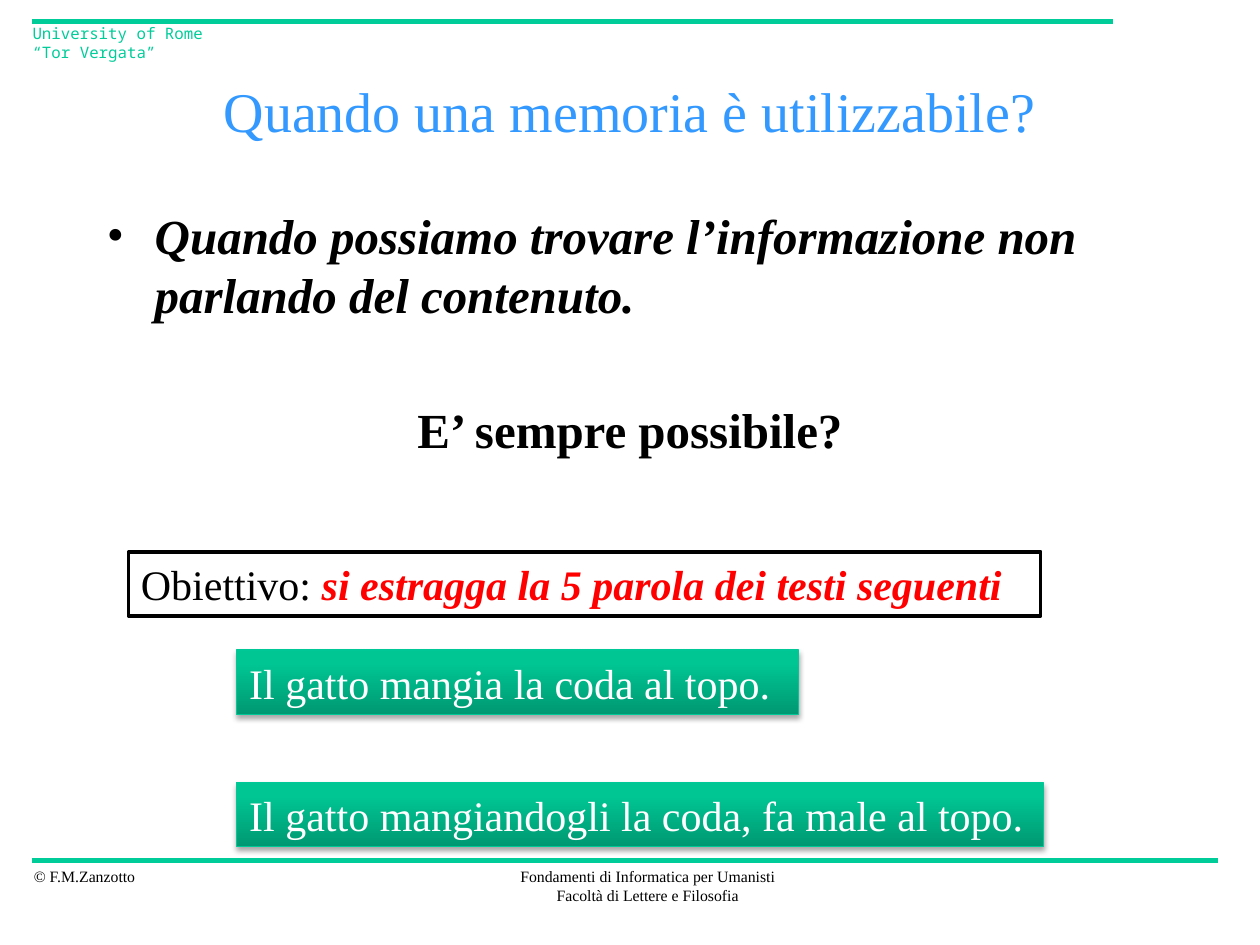
from lxml import etree
from pptx import Presentation
from pptx.dml.color import RGBColor
from pptx.enum.shapes import MSO_CONNECTOR, MSO_SHAPE
from pptx.enum.text import MSO_ANCHOR, PP_ALIGN
from pptx.oxml.ns import qn
from pptx.util import Inches, Pt

LINE = MSO_CONNECTOR.STRAIGHT
RECT = MSO_SHAPE.RECTANGLE
LEFT, CENTER = PP_ALIGN.LEFT, PP_ALIGN.CENTER
TOP, MIDDLE = MSO_ANCHOR.TOP, MSO_ANCHOR.MIDDLE

SERIF, MONO = "Times New Roman", "Noto Sans Mono"
BLACK, WHITE, RED = "000000", "FFFFFF", "FF0000"
GREEN, BLUE = "00CC99", "3399FF"
EDGE = "00C896"
GRADIENT = [(0, "009872"), (80, "00C694"), (100, "00C795")]


def rgb(value):
    return RGBColor.from_string(value)


def child(parent, tag, **attrs):
    """Append a DrawingML element with the given attributes."""
    return etree.SubElement(parent, qn(tag), {k: str(v) for k, v in attrs.items()})


class Deck:
    def __init__(self):
        self.prs = Presentation()
        self.prs.slide_width, self.prs.slide_height = Inches(10), Inches(7.5)
        self.s = self.prs.slides.add_slide(self.prs.slide_layouts[6])

    def style(self, p, size, color, font=SERIF, bold=False, italic=False):
        for r in p.runs:
            f = r.font
            f.name, f.size, f.bold, f.italic = font, Pt(size), bold, italic
            f.color.rgb = rgb(color)

    def rule(self, x1, x2, y):
        line = self.s.shapes.add_connector(LINE, Inches(x1), Inches(y), Inches(x2), Inches(y))
        line.line.color.rgb = rgb(GREEN)
        line.line.width = Pt(3)
        child(line._element.spPr, "a:effectLst")

    def text(self, box, lines, size, color, font=SERIF, align=LEFT, anchor=TOP, wrap=True):
        tf = self.s.shapes.add_textbox(*map(Inches, box)).text_frame
        tf.word_wrap, tf.vertical_anchor = wrap, anchor
        tf.text = "\n".join(lines)
        for p in tf.paragraphs:
            p.alignment = align
            self.style(p, size, color, font)
        return tf

    def bullet(self, p):
        pPr = p._p.get_or_add_pPr()
        pPr.set("marL", str(Inches(0.38)))
        pPr.set("indent", str(-Inches(0.38)))
        child(pPr, "a:buFont", typeface=SERIF)
        child(pPr, "a:buChar", char="•")

    def box(self, box, text, color, line, width):
        sp = self.s.shapes.add_shape(RECT, *map(Inches, box))
        sp.shadow.inherit = False
        sp.fill.solid()
        sp.fill.fore_color.rgb = rgb(WHITE)
        sp.line.color.rgb = rgb(line)
        sp.line.width = Pt(width)
        tf = sp.text_frame
        tf.word_wrap = True
        tf.text = text
        p = tf.paragraphs[0]
        p.alignment = LEFT
        self.style(p, 24, color)
        return sp

    def example(self, box, text):
        """Box with a vertical green gradient and a soft shadow below."""
        sp = self.box(box, text, WHITE, EDGE, 0.75)
        sp.fill.gradient()
        sp.fill.gradient_angle = 90
        spPr = sp._element.spPr
        stops = spPr.find(".//" + qn("a:gsLst"))
        for old in list(stops):
            stops.remove(old)
        for pos, color in GRADIENT:
            child(child(stops, "a:gs", pos=pos * 1000), "a:srgbClr", val=color)
        shadow = child(spPr.find(qn("a:effectLst")), "a:outerShdw", blurRad=Pt(3.1),
                       dist=Pt(1.8), dir=90 * 60000, rotWithShape=0)
        child(child(shadow, "a:srgbClr", val=BLACK), "a:alpha", val=35000)


def main():
    deck = Deck()
    deck.rule(0.25, 9.67, 6.83)
    deck.rule(0.25, 8.83, 0.17)
    deck.text((0.17, 6.83, 1.02, 0.25), ["© F.M.Zanzotto"], 9, BLACK, wrap=False)
    deck.text((4.02, 6.83, 2.24, 0.4),
              ["Fondamenti di Informatica per Umanisti", "Facoltà di Lettere e Filosofia"],
              9, BLACK, align=CENTER, wrap=False)
    deck.text((0.16, 0.14, 1.71, 0.4), ["University of Rome", "“Tor Vergata”"], 9, GREEN, MONO)

    deck.text((0.75, 0.5, 8.5, 0.75), ["Quando una memoria è utilizzabile?"],
              32, BLUE, align=CENTER, anchor=MIDDLE)

    tf = deck.text((0.75, 1.5, 8.5, 5.17),
                   ["Quando possiamo trovare l’informazione non parlando del contenuto.",
                    "E’ sempre possibile?"], 28, BLACK)
    tf.margin_top = Inches(0.13)
    answer, question = tf.paragraphs
    deck.bullet(answer)
    deck.style(answer, 28, BLACK, bold=True, italic=True)
    question.alignment = CENTER
    question.space_before = Pt(44)
    deck.style(question, 28, BLACK, bold=True)

    deck.example((1.88, 5.16, 4.46, 0.51), "Il gatto mangia la coda al topo.")
    deck.example((1.88, 6.21, 6.4, 0.51), "Il gatto mangiandogli la coda, fa male al topo.")

    goal = deck.box((1.02, 4.38, 7.24, 0.51), "Obiettivo: ", BLACK, BLACK, 2)
    r = goal.text_frame.paragraphs[0].add_run()
    r.text = "si estragga la 5 parola dei testi seguenti"
    f = r.font
    f.name, f.size, f.bold, f.italic = SERIF, Pt(24), True, True
    f.color.rgb = rgb(RED)

    deck.prs.save("out.pptx")


if __name__ == "__main__":
    main()
